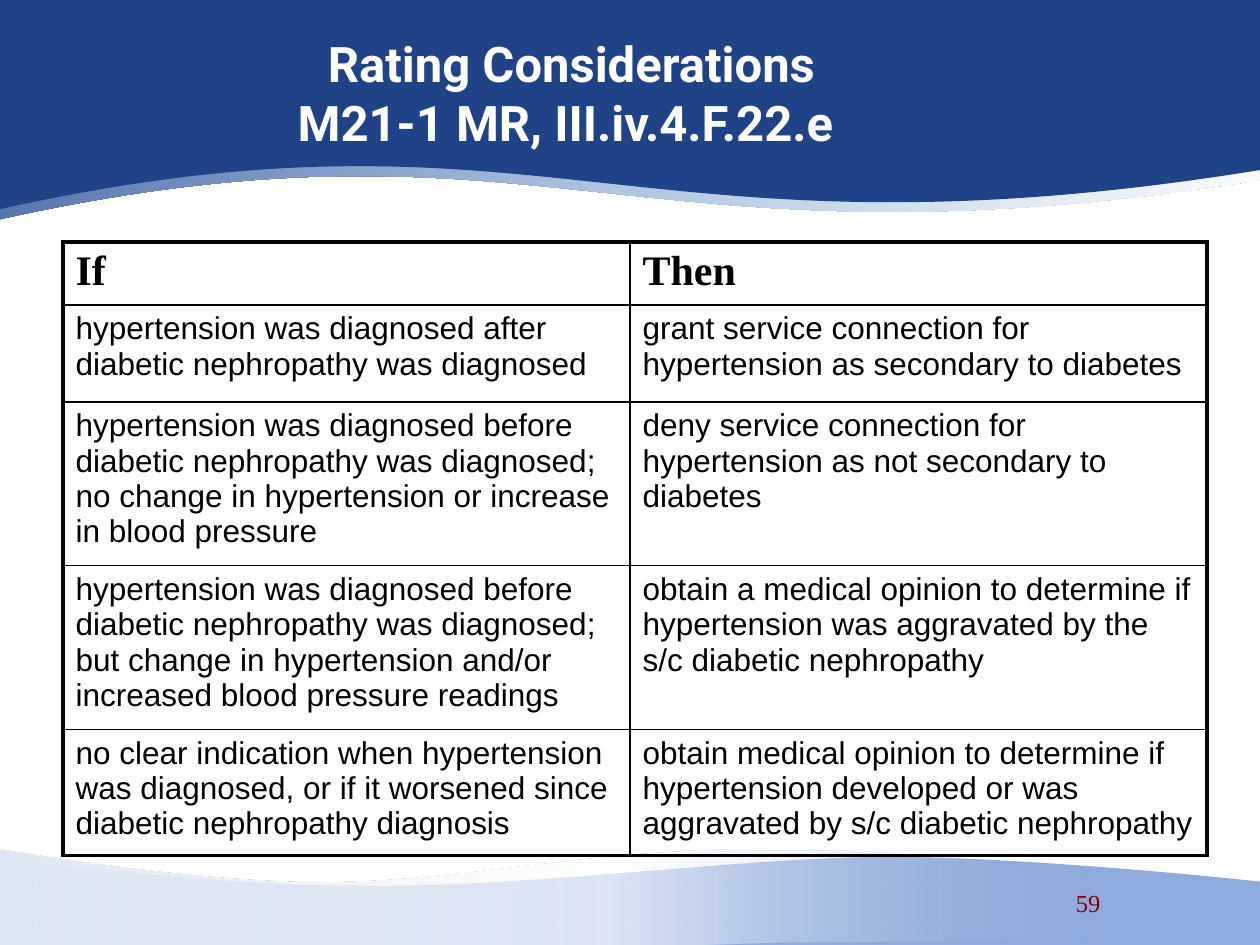
from dataclasses import dataclass

from lxml.etree import SubElement
from pptx import Presentation
from pptx.dml.color import RGBColor
from pptx.enum.text import MSO_ANCHOR, MSO_AUTO_SIZE, PP_ALIGN
from pptx.oxml.ns import qn
from pptx.util import Inches, Pt


@dataclass(frozen=True)
class Theme:
    navy: str = "204286"
    blue: str = "8FAADC"
    white: str = "FFFFFF"
    black: str = "000000"
    maroon: str = "800000"
    title: int = 28
    head: int = 24
    body: int = 18
    page: int = 14
    thin: float = 1
    thick: float = 2.25


THEME = Theme()

BAND = [(0, "315797", 100), (23, "6E8ABC", 100), (55, "B0C6E1", 100), (100, "FDFEFE", 100)]
FADE = [(0, "DCE6F2", 100), (56, "FFFFFF", 67), (100, "95B3D7", 0)]

FOOT = [
    (-0.02, 7.55), (-0.03, 7.55, 1.44, 7.54, 2.83, 7.55),
    (4.22, 7.56, 5.76, 7.54, 6.96, 7.54), (10.02, 7.51),
    (10.03, 7.26, 10.01, 7, 10.03, 7), (10.04, 7, 8.21, 6.8, 7.02, 6.8),
    (5.84, 6.81, 4.23, 7.04, 2.91, 7.03), (1.58, 7.03, -0.03, 6.8, -0.01, 6.81),
    (-0.01, 7.06, -0.02, 7.55, -0.02, 7.55),
]
MIST = [
    (-0.02, 7.56), (-0.03, 7.55, 1.57, 7.62, 2.59, 7.61), (6.16, 7.48),
    (7.2, 7.48, 8.78, 7.45, 8.77, 7.45), (8.77, 7.16, 8.73, 6.97, 8.75, 6.97),
    (8.76, 6.97, 7.55, 6.74, 6.12, 6.74), (4.68, 6.73, 3.68, 7, 2.53, 7),
    (1.37, 6.99, -0.03, 6.73, -0.01, 6.74), (-0.01, 7.02, -0.02, 7.56, -0.02, 7.56),
]
EDGE = [
    (9.99, 0.08), (-0.01, 0.08), (-0.01, 0.62, 0, 1.2, 0, 1.74),
    (4.34, 0.78, 4.99, 2.23, 9.99, 1.43), (9.99, 0.08),
]
HEAD = [
    (10, 0), (-0.01, 0), (-0.01, 0.54, 0, 1.12, 0, 1.66),
    (4.34, 0.7, 5, 2.16, 10, 1.35), (10, 0),
]

ROWS = [
    ("If", "Then"),
    ("hypertension was diagnosed after diabetic nephropathy was diagnosed",
     "grant service connection for hypertension as secondary to diabetes"),
    ("hypertension was diagnosed before diabetic nephropathy was diagnosed; "
     "no change in hypertension or increase in blood pressure",
     "deny service connection for hypertension as not secondary to diabetes"),
    ("hypertension was diagnosed before diabetic nephropathy was diagnosed; "
     "but change in hypertension and/or increased blood pressure readings",
     "obtain a medical opinion to determine if hypertension was aggravated "
     "by the s/c diabetic nephropathy"),
    ("no clear indication when hypertension was diagnosed, or if it worsened "
     "since diabetic nephropathy diagnosis",
     "obtain medical opinion to determine if hypertension developed or was "
     "aggravated by s/c diabetic nephropathy"),
]
WIDTHS = (4.5, 4.58)
HEIGHTS = (0.5, 0.77, 1.3, 1.3, 1)


def style(para, name, size, color, bold=False):
    font = para.font
    font.name, font.size, font.bold = name, Pt(size), bold
    font.color.rgb = RGBColor.from_string(color)


def bend(wave, path, left, top):
    lines = list(wave.element.iter(qn("a:lnTo")))
    for line, part in zip(lines, path[1:]):
        if len(part) == 2:
            continue
        line.tag = qn("a:cubicBezTo")
        for node in list(line):
            line.remove(node)
        for x, y in zip(part[::2], part[1::2]):
            SubElement(line, qn("a:pt"), x=str(Inches(x) - left), y=str(Inches(y) - top))


def shade(shape, stops, angle):
    shape.fill.gradient()
    grad = shape.element.spPr.find(qn("a:gradFill"))
    group = grad.find(qn("a:gsLst"))
    for stop in list(group):
        group.remove(stop)
    for place, color, alpha in stops:
        stop = SubElement(group, qn("a:gs"), pos=str(place * 1000))
        tint = SubElement(stop, qn("a:srgbClr"), val=color)
        if alpha < 100:
            SubElement(tint, qn("a:alpha"), val=str(alpha * 1000))
    grad.find(qn("a:lin")).set("ang", str(angle * 60000))


def add_wave(slide, path, color=None, stops=None, angle=0):
    knots = [(Inches(part[-2]), Inches(part[-1])) for part in path]
    pen = slide.shapes.build_freeform(*knots[0])
    pen.add_line_segments(knots[1:], close=True)
    wave = pen.convert_to_shape()
    bend(wave, path, pen.shape_offset_x, pen.shape_offset_y)
    wave.shadow.inherit = False
    wave.line.fill.background()
    if stops:
        shade(wave, stops, angle)
    else:
        wave.fill.solid()
        wave.fill.fore_color.rgb = RGBColor.from_string(color)


def add_title(slide, text):
    title = slide.shapes.title
    tree = title.element.getparent()
    tree.remove(title.element)
    tree.append(title.element)
    title.left, title.top = Inches(0.69), Inches(0.4)
    title.width, title.height = Inches(7.69), Inches(0.67)
    frame = title.text_frame
    frame.text = text
    frame.auto_size = MSO_AUTO_SIZE.NONE
    frame.vertical_anchor = MSO_ANCHOR.MIDDLE
    para = frame.paragraphs[0]
    para.alignment = PP_ALIGN.CENTER
    style(para, "Roboto", THEME.title, THEME.white, True)


def add_page(slide, text):
    box = slide.shapes.add_textbox(Inches(8.44), Inches(7), Inches(0.87), Inches(0.4))
    box.text_frame.word_wrap = True
    box.text_frame.text = text
    style(box.text_frame.paragraphs[0], "Times New Roman", THEME.page, THEME.maroon)


def rule_cell(cell, outer):
    props = cell._tc.get_or_add_tcPr()
    for spot, (side, edge) in enumerate(zip("LRTB", outer)):
        width = THEME.thick if edge else THEME.thin
        line = props.makeelement(qn("a:ln" + side), {"w": str(Pt(width))})
        fill = SubElement(line, qn("a:solidFill"))
        SubElement(fill, qn("a:srgbClr"), val=THEME.black)
        props.insert(spot, line)


def add_grid(slide):
    frame = slide.shapes.add_table(
        len(ROWS), len(WIDTHS), Inches(0.5), Inches(1.92),
        Inches(sum(WIDTHS)), Inches(sum(HEIGHTS)))
    table = frame.table
    table.first_row = table.horz_banding = False
    for col, width in zip(table.columns, WIDTHS):
        col.width = Inches(width)
    for row, height in zip(table.rows, HEIGHTS):
        row.height = Inches(height)
    for r, texts in enumerate(ROWS):
        for c, text in enumerate(texts):
            cell = table.cell(r, c)
            cell.text = text
            cell.fill.background()
            para = cell.text_frame.paragraphs[0]
            if r == 0:
                style(para, "Times New Roman", THEME.head, THEME.black, True)
            else:
                style(para, "Arial", THEME.body, THEME.black)
            rule_cell(cell, (c == 0, c == len(WIDTHS) - 1, r == 0, r == len(ROWS) - 1))


def main():
    deck = Presentation()
    deck.slide_width, deck.slide_height = Inches(10), Inches(7.5)
    slide = deck.slides.add_slide(deck.slide_layouts[5])
    add_wave(slide, FOOT, THEME.blue)
    add_wave(slide, MIST, stops=FADE)
    add_wave(slide, EDGE, stops=BAND, angle=45)
    add_wave(slide, HEAD, THEME.navy)
    add_page(slide, "59")
    add_title(slide, "Rating Considerations\vM21-1 MR, III.iv.4.F.22.e ")
    add_grid(slide)
    deck.save("out.pptx")


if __name__ == "__main__":
    main()
